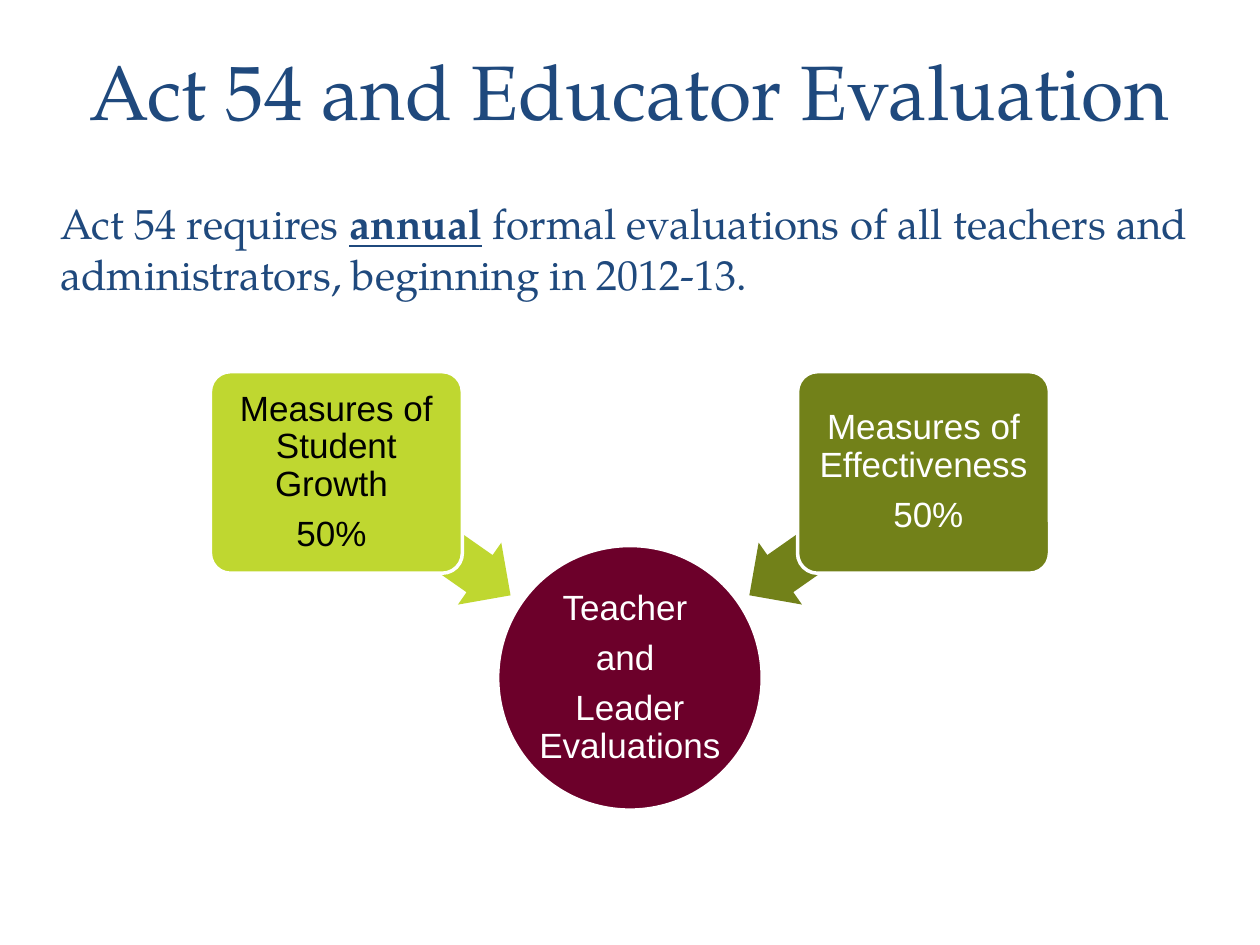
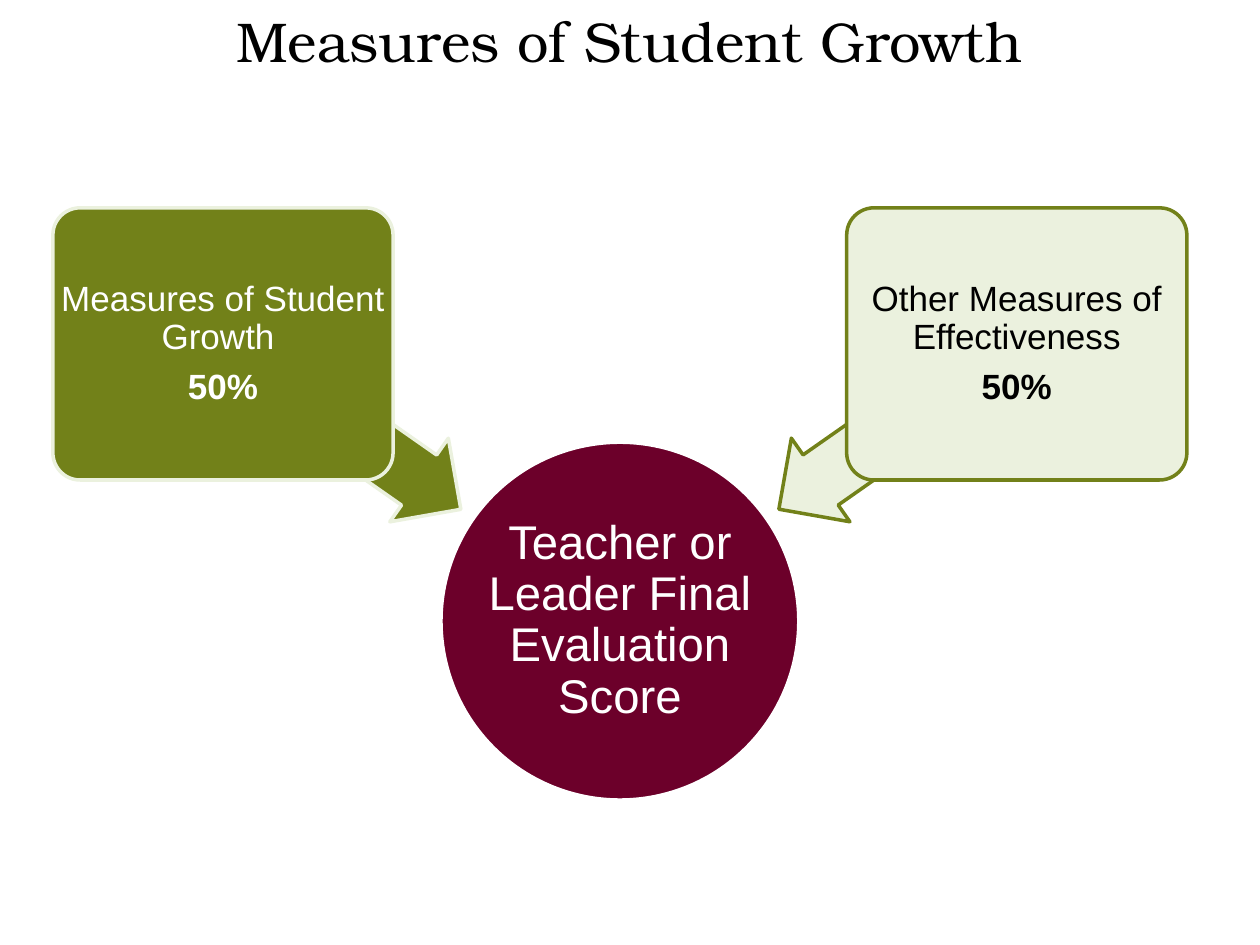
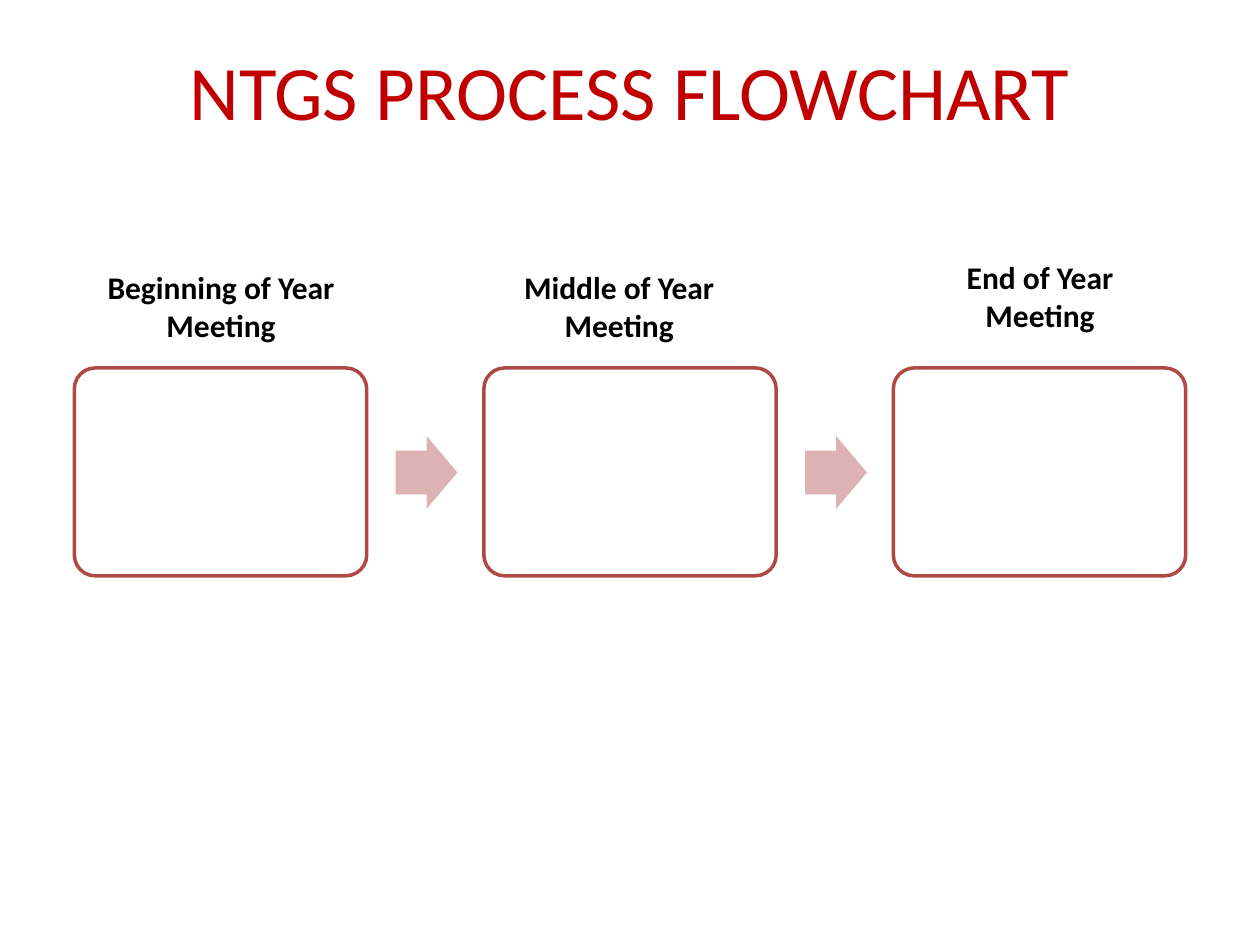
from pptx import Presentation
from pptx.dml.color import RGBColor
from pptx.enum.shapes import MSO_SHAPE
from pptx.enum.text import MSO_ANCHOR, PP_ALIGN
from pptx.util import Inches, Pt

ELLIPSE = MSO_SHAPE.OVAL
ROUNDED = MSO_SHAPE.ROUNDED_RECTANGLE
LEFT_ARROW = MSO_SHAPE.LEFT_ARROW
RIGHT_ARROW = MSO_SHAPE.RIGHT_ARROW
LEFT, CENTER = PP_ALIGN.LEFT, PP_ALIGN.CENTER
TOP, MIDDLE = MSO_ANCHOR.TOP, MSO_ANCHOR.MIDDLE

COLORS = {
    "navy": "1F497D", "red": "C00000", "maroon": "6C002A", "lime": "BFD730",
    "olive": "728119", "pale": "EBF1DE", "brick": "AE4946", "rose": "DCB3B2",
    "white": "FFFFFF", "black": "000000",
}
SERIF, BOOK, SANS, BODY = "TeX Gyre Pagella", "TeX Gyre Bonum", "Arial", "Calibri"

BODY_ARROW = (0.6, 0.5)
ROUNDING = (0.1,)


def color(name):
    return RGBColor.from_string(COLORS[name])


def add_page(deck):
    return deck.slides.add_slide(deck.slide_layouts[6])


def add_text(page, area, paragraphs, *, size, font, ink, align=CENTER, anchor=TOP,
             bold=False, margins=(0.1, 0.05), line_spacing=None, before=0, after=0):
    """Each paragraph is a string or a list of (text, format) spans."""
    box = page.shapes.add_textbox(*map(Inches, area))
    frame = box.text_frame
    frame.word_wrap = True
    frame.vertical_anchor = anchor
    frame.margin_left = frame.margin_right = Inches(margins[0])
    frame.margin_top = frame.margin_bottom = Inches(margins[1])
    for index, content in enumerate(paragraphs):
        para = frame.add_paragraph() if index else frame.paragraphs[0]
        para.alignment = align
        para.line_spacing = line_spacing
        para.space_before, para.space_after = Pt(before), Pt(after)
        for text, extra in [(content, {})] if isinstance(content, str) else content:
            span = para.add_run()
            span.text = text
            span.font.name, span.font.size = font, Pt(size)
            span.font.color.rgb = color(ink)
            span.font.bold = extra.get("bold", bold)
            span.font.underline = extra.get("underline", False)


def add_title(page, text, *, area=(0.5, 0.3, 9, 1.25), size=44, font=SERIF, ink="navy"):
    add_text(page, area, [text], size=size, font=font, ink=ink)


def add_figure(page, kind, area, *, fill, line=None, adjust=(), rotation=0):
    shape = page.shapes.add_shape(kind, *map(Inches, area))
    shape.shadow.inherit = False
    shape.fill.solid()
    shape.fill.fore_color.rgb = color(fill)
    if line:
        shape.line.color.rgb = color(line)
        shape.line.width = Pt(2)
    else:
        shape.line.fill.background()
    for index, value in enumerate(adjust):
        shape.adjustments[index] = value
    shape.rotation = rotation


def add_label(page, area, paragraphs, *, size, ink, margin):
    add_text(page, area, paragraphs, size=size, font=SANS, ink=ink, anchor=MIDDLE,
             margins=(margin, 0.04), line_spacing=0.9, after=size * 0.35)


def add_score_diagram(page, measures, result, *, center, circle_top, diameter,
                      result_size, box_top, box_size, box_offset,
                      arrow_top, arrow_size, arrow_offset):
    """Two measures, mirrored about the center, point down at the result circle."""
    circle = (center - diameter / 2, circle_top, diameter, diameter)
    add_figure(page, ELLIPSE, circle, fill="maroon", line="white")
    add_label(page, circle, result, size=result_size, ink="white", margin=0.2)

    for side, rotation, measure in zip((-1, 1), (215, 325), measures):
        arrow_left = center + side * arrow_offset - arrow_size[0] / 2
        add_figure(page, LEFT_ARROW, (arrow_left, arrow_top, *arrow_size),
                   fill=measure["fill"], line=measure.get("arrow_line"),
                   adjust=BODY_ARROW, rotation=rotation)
        box_left = center + side * box_offset - box_size[0] / 2
        area = (box_left, box_top, *box_size)
        add_figure(page, ROUNDED, area, fill=measure["fill"], line=measure["line"],
                   adjust=ROUNDING)
        add_label(page, area, measure["text"], size=20, ink=measure["ink"], margin=0.05)


def build_act_page(deck):
    page = add_page(deck)
    measures = [
        {"text": ["Measures of Student Growth ", "50% "],
         "fill": "lime", "line": "white", "ink": "black"},
        {"text": ["Measures of Effectiveness", " 50%"],
         "fill": "olive", "line": "white", "ink": "white"},
    ]
    add_score_diagram(
        page, measures, ["Teacher ", "and ", "Leader Evaluations"],
        center=5, circle_top=4.33, diameter=2.1, result_size=20,
        box_top=2.95, box_size=(2, 1.6), box_offset=2.33,
        arrow_top=3.94, arrow_size=(1.69, 0.6), arrow_offset=1.64)
    add_title(page, "Act 54 and Educator Evaluation")
    requirement = [
        ("Act 54 requires ", {}),
        ("annual", {"bold": True, "underline": True}),
        (" formal evaluations of all teachers and administrators, "
         "beginning in 2012-13.", {}),
    ]
    add_text(page, (0.38, 1.52, 9.25, 0.95), [requirement], size=24, font=SERIF,
             ink="navy", align=LEFT, before=4.8)


def build_growth_page(deck):
    page = add_page(deck)
    add_title(page, "Measures of Student Growth", area=(0, 0, 10, 0.64), size=32,
              font=BOOK, ink="black")
    share = [("50%", {"bold": True})]
    measures = [
        {"text": ["Measures of Student Growth ", share],
         "fill": "olive", "line": "pale", "arrow_line": "pale", "ink": "white"},
        {"text": ["Other Measures of Effectiveness", share],
         "fill": "pale", "line": "olive", "arrow_line": "olive", "ink": "black"},
    ]
    add_score_diagram(
        page, measures, ["Teacher or Leader Final Evaluation Score"],
        center=4.92, circle_top=3.51, diameter=2.84, result_size=27,
        box_top=1.65, box_size=(2.7, 2.16), box_offset=3.15,
        arrow_top=2.98, arrow_size=(2.29, 0.81), arrow_offset=2.2)


def build_flowchart_page(deck):
    page = add_page(deck)
    add_title(page, "NTGS PROCESS FLOWCHART", font=BODY, ink="red")
    first_left, step = 0.59, 3.25
    meetings = [
        ("Beginning of Year Meeting", 0.67, 2.08),
        ("Middle of Year Meeting", 3.83, 2.08),
        ("End of Year Meeting", 7.17, 2),
    ]
    for index, (meeting, label_left, label_top) in enumerate(meetings):
        box_left = first_left + index * step
        add_figure(page, ROUNDED, (box_left, 2.92, 2.32, 1.65), fill="white",
                   line="brick", adjust=ROUNDING)
        if index < len(meetings) - 1:
            add_figure(page, RIGHT_ARROW, (box_left + 2.55, 3.46, 0.49, 0.58),
                       fill="rose", adjust=BODY_ARROW)
        add_text(page, (label_left, label_top, 2.17, 0.71), [meeting], size=18,
                 font=BODY, ink="black", bold=True)


def main():
    deck = Presentation()
    deck.slide_width, deck.slide_height = Inches(10), Inches(7.5)
    build_act_page(deck)
    build_growth_page(deck)
    build_flowchart_page(deck)
    deck.save("out.pptx")


if __name__ == "__main__":
    main()
